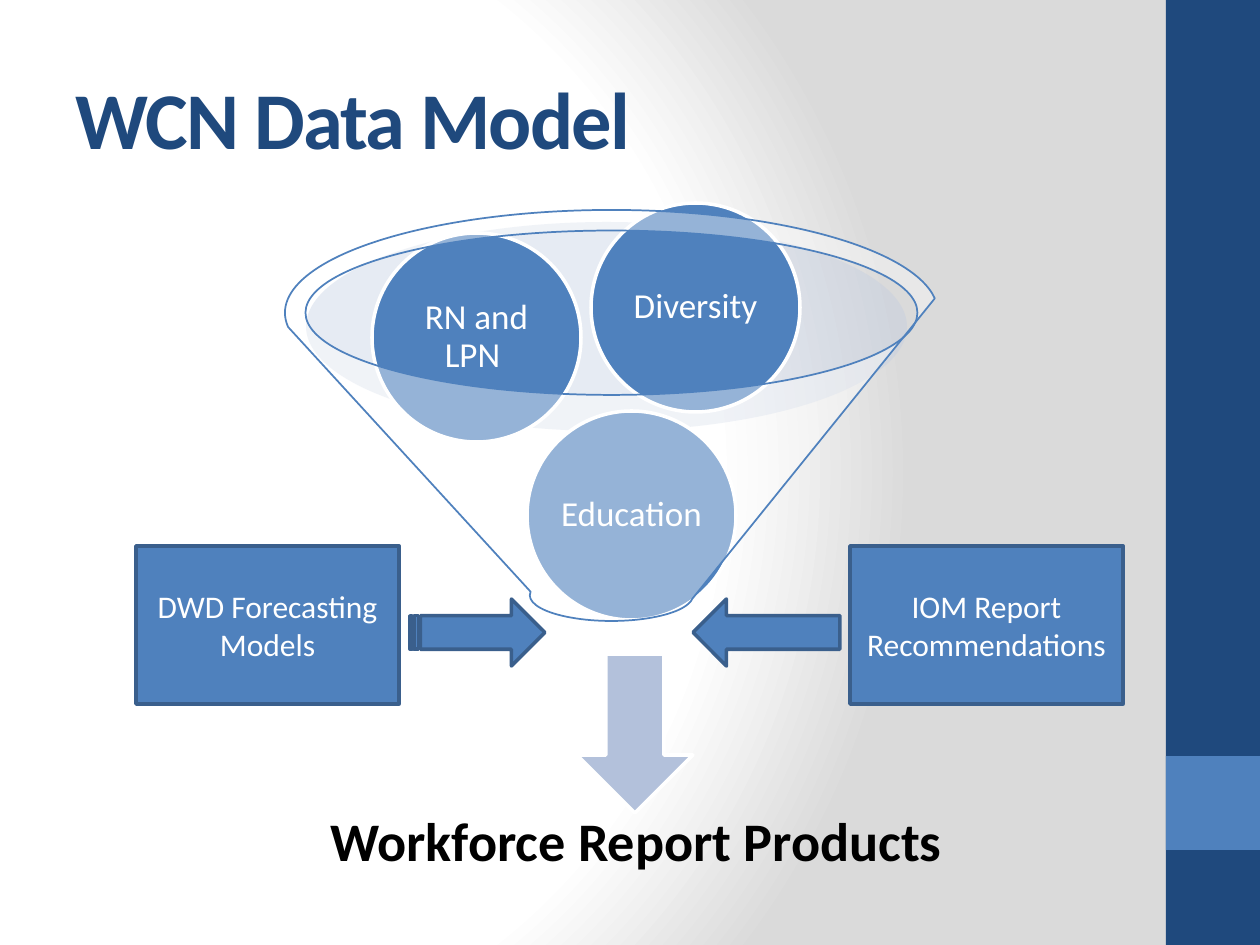
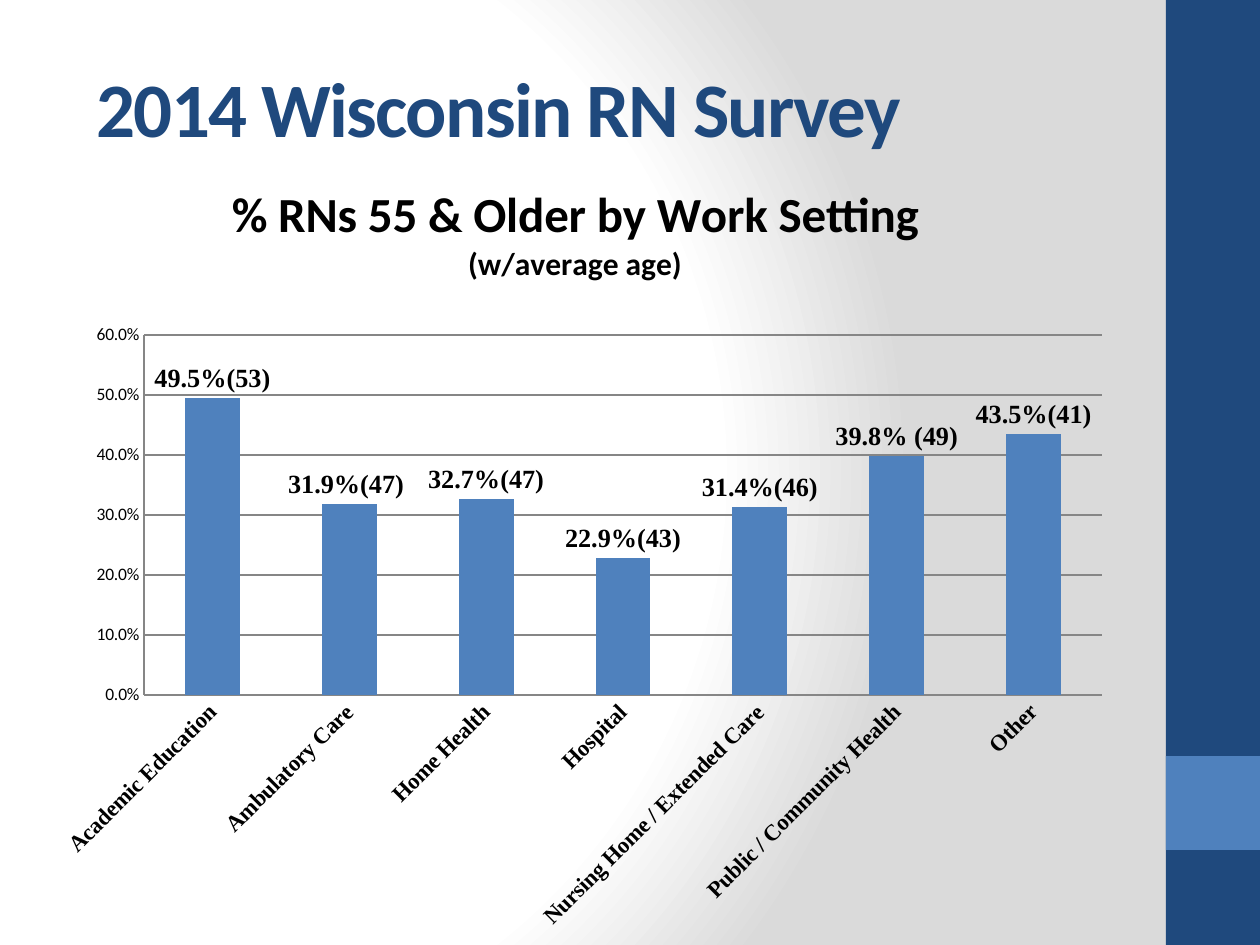
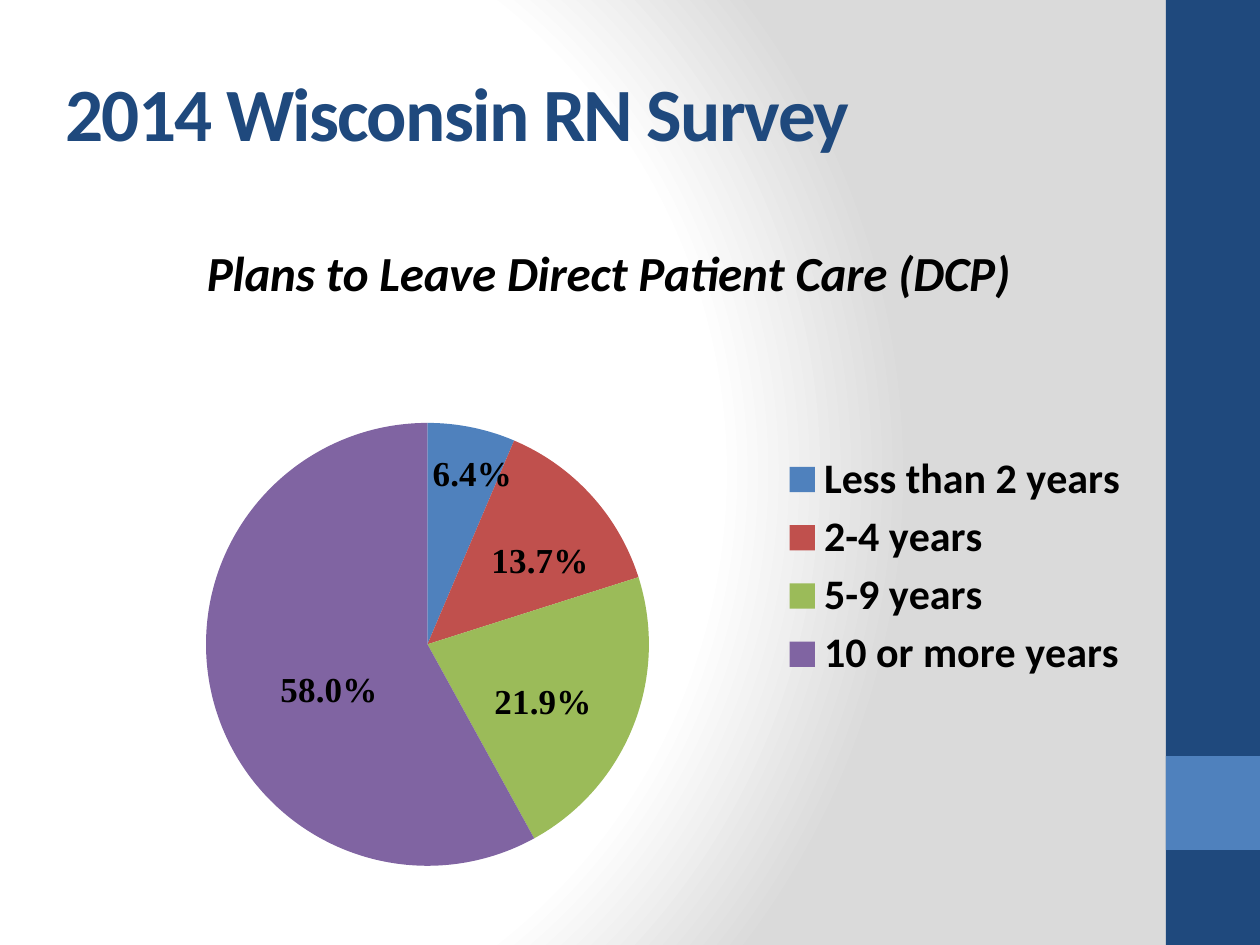
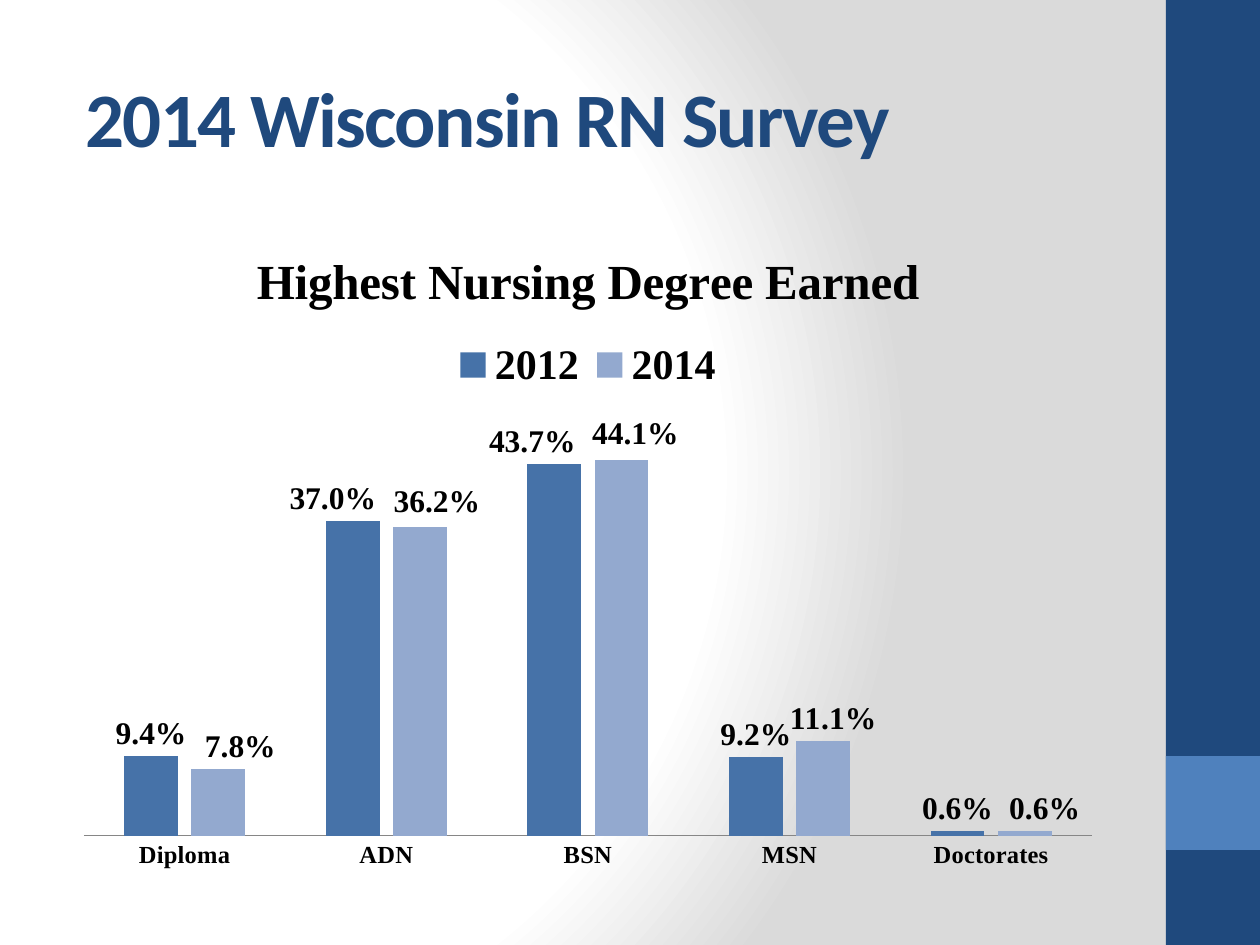
import copy

import pptx
import pptx.chart.data
import pptx.dml.color
import pptx.enum.chart
import pptx.enum.shapes
import pptx.enum.text
import pptx.oxml
import pptx.oxml.ns
import pptx.util

SCALE = 914400 / 126  # EMU in one px
SLIDE_W, SLIDE_H = 1260, 945

COLORS = {
    "navy": "1F497D",
    "blue": "4F81BD",
    "edge": "3A5F8C",
    "haze": "C2CDE1",
    "pale": "B3C1DB",
    "red": "C0504D",
    "green": "9BBB59",
    "purple": "8064A2",
    "bar_2012": "4672A8",
    "bar_2014": "93A9CF",
    "axis": "868686",
    "grey": "DADADA",
    "white": "FFFFFF",
    "black": "000000",
}
SANS, SERIF = "Calibri", "Times New Roman"

SHAPE = pptx.enum.shapes.MSO_SHAPE
CHART = pptx.enum.chart.XL_CHART_TYPE
LABEL = pptx.enum.chart.XL_LABEL_POSITION
LEGEND = pptx.enum.chart.XL_LEGEND_POSITION
TICK = pptx.enum.chart.XL_TICK_MARK
ALIGN = pptx.enum.text.PP_ALIGN
ANCHOR = pptx.enum.text.MSO_ANCHOR
qn = pptx.oxml.ns.qn


# ---- helpers
def px(n):
    return pptx.util.Emu(round(n * SCALE))


def box(*lengths):
    return [px(n) for n in lengths]


def rgb(name):
    return pptx.dml.color.RGBColor.from_string(COLORS[name])


def xml(text, prefix):
    head, tail = text.split(">", 1)
    return pptx.oxml.parse_xml(f"{head} {pptx.oxml.ns.nsdecls(prefix)}>{tail}")


def set_all(obj, values):
    for key, value in values.items():
        setattr(obj, key, value)


def set_font(font, size, name=SANS, bold=False, color="black", italic=False):
    set_all(font, {"size": pptx.util.Pt(size), "name": name,
                   "bold": bold, "italic": italic})
    font.color.rgb = rgb(color)


def set_text(p, text, **fmt):
    r = p.add_run()
    r.text = text
    set_font(r.font, **fmt)
    return r


# ---- shapes
def add_shape(slide, kind, at, fill, line=None, width=2, alpha=None):
    sp = slide.shapes.add_shape(kind, *box(*at))
    sp.shadow.inherit = False
    sp.fill.solid()
    sp.fill.fore_color.rgb = rgb(fill)
    if alpha:
        clr = sp.element.spPr.find(".//" + qn("a:srgbClr"))
        clr.append(xml(f'<a:alpha val="{alpha * 1000}"></a:alpha>', "a"))
    if line:
        sp.line.color.rgb = rgb(line)
        sp.line.width = pptx.util.Pt(width)
    else:
        sp.line.fill.background()
    return sp


def add_words(sp, text, inset=None, spacing=None, **fmt):
    tf = sp.text_frame
    set_all(tf, {"word_wrap": True, "vertical_anchor": ANCHOR.MIDDLE})
    if inset is not None:
        sides = ("left", "top", "right", "bottom")
        set_all(tf, {f"margin_{side}": px(inset) for side in sides})
    p = tf.paragraphs[0]
    set_all(p, {"alignment": ALIGN.CENTER, "line_spacing": spacing})
    set_text(p, text, **fmt)


# ---- shared look
def set_master(prs, slide):
    master = prs.slide_master
    master.background.fill.solid()
    bg = master.element.cSld.bg.bgPr
    stops = "".join(
        f'<a:gs pos="{pos * 1000}"><a:srgbClr val="{COLORS[name]}"/></a:gs>'
        for pos, name in ((0, "white"), (75, "white"), (100, "grey")))
    bg.replace(bg[0], xml(
        f'<a:gradFill rotWithShape="1"><a:gsLst>{stops}</a:gsLst>'
        '<a:path path="circle"><a:fillToRect l="20000" t="50000" '
        'r="100000" b="50000"/></a:path></a:gradFill>', "a"))
    # Side bands, moved behind the master's placeholders
    tree = master.element.cSld.spTree
    bands = ((0, SLIDE_H, "navy"), (756, 94, "blue"))
    for i, (top, height, fill) in enumerate(bands):
        sp = add_shape(slide, SHAPE.RECTANGLE, (1166, top, 94, height), fill)
        sp.element.nvSpPr.cNvPr.set("id", str(100 + i))
        tree.insert(2 + i, sp.element)


def add_slide(prs, title, at, size):
    slide = prs.slides.add_slide(prs.slide_layouts[5])
    sp = slide.shapes.title
    set_all(sp, dict(zip(("left", "top", "width", "height"), box(*at))))
    tf = sp.text_frame
    set_all(tf, {"word_wrap": True, "vertical_anchor": ANCHOR.MIDDLE,
                 "auto_size": pptx.enum.text.MSO_AUTO_SIZE.NONE})
    p = tf.paragraphs[0]
    p.alignment = ALIGN.LEFT
    r = set_text(p, title, size=size, bold=True, color="navy")
    r.font._element.set("spc", "-100")
    return slide


# ---- charts
def place(chart, tag, frame, at, inner=False):
    """Put the plot area, title or legend at a px box on the slide."""
    el = chart.element.find(".//" + qn(tag))
    for old in el.findall(qn("c:layout")):
        el.remove(old)
    left, top, width, height = frame
    parts = {"x": (at[0] - left) / width, "y": (at[1] - top) / height}
    if len(at) == 4:
        parts.update(w=at[2] / width, h=at[3] / height)
    target = '<c:layoutTarget val="inner"/>' if inner else ""
    modes = '<c:xMode val="edge"/><c:yMode val="edge"/>'
    values = "".join(f'<c:{k} val="{v:.4f}"/>' for k, v in parts.items())
    layout = xml(f"<c:layout><c:manualLayout>{target}{modes}{values}"
                 "</c:manualLayout></c:layout>", "c")
    el.insert(0 if inner else 1, layout)


def nudge_labels(series, frame, moves):
    """Shift single data labels by px, keeping the format of the series."""
    labels = series.data_labels._element
    shared = [el for el in labels
              if el.tag not in (qn("c:dLbl"), qn("c:showLeaderLines"))]
    for i, (idx, (dx, dy)) in enumerate(moves.items()):
        label = xml(
            f'<c:dLbl><c:idx val="{idx}"/><c:layout><c:manualLayout>'
            f'<c:x val="{dx / frame[2]:.4f}"/><c:y val="{dy / frame[3]:.4f}"/>'
            "</c:manualLayout></c:layout></c:dLbl>", "c")
        label.extend(copy.deepcopy(el) for el in shared)
        labels.insert(i, label)


def add_chart(slide, kind, frame, cats, series, title, plot_at, title_at):
    data = pptx.chart.data.CategoryChartData(number_format="0.0%")
    data.categories = cats
    for name, values in series:
        data.add_series(name, values)
    chart = slide.shapes.add_chart(kind, *box(*frame), data).chart
    set_font(chart.font, 10)
    chart.has_legend = False
    chart.has_title = True
    tf = chart.chart_title.text_frame
    for i, (text, fmt) in enumerate(title):
        p = tf.add_paragraph() if i else tf.paragraphs[0]
        set_text(p, text, bold=True, **fmt)
    place(chart, "c:plotArea", frame, plot_at, inner=True)
    place(chart, "c:title", frame, title_at)
    return chart


def add_legend(chart, position, frame, at, name):
    chart.has_legend = True
    set_all(chart.legend, {"position": position, "include_in_layout": False})
    set_font(chart.legend.font, 24, name, bold=True)
    place(chart, "c:legend", frame, at)


def set_labels(series, size, position, **show):
    labels = series.data_labels
    set_font(labels.font, size, SERIF, bold=True)
    set_all(labels, {"number_format": "0.0%", "number_format_is_linked": False,
                     "position": position, **show})


def set_columns(chart, fills, top, cat_size):
    plot = chart.plots[0]
    set_all(plot, {"gap_width": 150, "vary_by_categories": False})
    for series, fill in zip(plot.series, fills):
        series.format.fill.solid()
        series.format.fill.fore_color.rgb = rgb(fill)
    cat, val = chart.category_axis, chart.value_axis
    for axis in (cat, val):
        set_all(axis, {"major_tick_mark": TICK.NONE,
                       "minor_tick_mark": TICK.NONE})
        axis.format.line.color.rgb = rgb("axis")
    set_font(cat.tick_labels.font, cat_size, SERIF, bold=True)
    set_all(val, {"minimum_scale": 0, "maximum_scale": top, "major_unit": 0.1})
    set_all(val.tick_labels, {"number_format": "0.0%",
                              "number_format_is_linked": False})


# ---- slides
def add_data_model(slide):
    # Funnel with its three inputs
    add_shape(slide, SHAPE.OVAL, (306, 222, 601, 209), "haze", alpha=40)
    add_shape(slide, SHAPE.DOWN_ARROW, (577, 654, 116, 159), "pale", "white")
    result = slide.shapes.add_textbox(*box(290, 774, 692, 140))
    add_words(result, "Workforce Report Products", inset=30, spacing=0.9,
              size=31, bold=True)
    for text, left, top in (("Education", 527, 411), ("RN and LPN ", 372, 233),
                            ("Diversity", 591, 203)):
        ball = add_shape(slide, SHAPE.OVAL, (left, top, 209, 209),
                         "blue", "white")
        add_words(ball, text, inset=0, spacing=0.9, size=20, color="white")
    add_shape(slide, SHAPE.FUNNEL, (285, 210, 653, 411), "white", "blue",
              width=1, alpha=40)
    # Outside sources
    for kind, arrow_at, text, left, width in (
            (SHAPE.STRIPED_RIGHT_ARROW, (410, 599, 135, 67),
             "DWD Forecasting Models", 136, 263),
            (SHAPE.LEFT_ARROW, (693, 599, 147, 67),
             "IOM Report Recommendations", 850, 273)):
        add_shape(slide, kind, arrow_at, "blue", "edge")
        source = add_shape(slide, SHAPE.RECTANGLE, (left, 546, width, 158),
                           "blue", "edge")
        add_words(source, text, size=18, color="white")


def add_work_settings(slide):
    settings = {
        "Academic Education": (0.495, "49.5%(53)"),
        "Ambulatory Care": (0.319, "31.9%(47) "),
        "Home Health": (0.327, "32.7%(47)"),
        "Hospital": (0.229, "22.9%(43)"),
        "Nursing Home / Extended Care": (0.314, "31.4%(46)"),
        "Public / Community Health": (0.398, "39.8% (49)"),
        "Other": (0.435, "43.5%(41)"),
    }
    values, texts = zip(*settings.values())
    chart = add_chart(
        slide, CHART.COLUMN_CLUSTERED, (42, 179, 1081, 766), list(settings),
        [("", values)],
        [("% RNs 55 & Older by Work Setting", {"size": 28}),
         ("(w/average age)", {"size": 18})],
        plot_at=(144, 335, 958, 360), title_at=(228, 180))
    set_columns(chart, ["blue"], top=0.6, cat_size=13)
    chart.value_axis.major_gridlines.format.line.color.rgb = rgb("axis")
    chart.category_axis._element.txPr.bodyPr.set("rot", "-2700000")
    series = chart.plots[0].series[0]
    set_labels(series, 15, LABEL.OUTSIDE_END, show_value=True)
    for i, text in enumerate(texts):
        label = series.points[i].data_label
        set_text(label.text_frame.paragraphs[0], text, size=15, name=SERIF,
                 bold=True)
        label.position = LABEL.OUTSIDE_END


def add_leave_plans(slide):
    frame = (73, 210, 1071, 714)
    chart = add_chart(
        slide, CHART.PIE, frame,
        ["Less than 2 years", "2-4 years", "5-9 years", "10 or more years"],
        [("Series 1", (6.4, 13.7, 21.9, 58))],
        [("Plans to Leave Direct Patient Care (DCP)",
          {"size": 28, "italic": True})],
        plot_at=(206, 423, 443, 443), title_at=(198, 231))
    add_legend(chart, LEGEND.RIGHT, frame, (780, 447, 350, 240), SANS)
    series = chart.plots[0].series[0]
    for i, fill in enumerate(("blue", "red", "green", "purple")):
        wedge = series.points[i].format.fill
        wedge.solid()
        wedge.fore_color.rgb = rgb(fill)
    set_labels(series, 20, LABEL.CENTER, show_value=False,
               show_percentage=True)
    nudge_labels(series, frame,
                 {0: (23, -61), 1: (31, -8), 2: (13, 17), 3: (9, 19)})


def add_degrees(slide):
    frame = (63, 221, 1050, 662)
    chart = add_chart(
        slide, CHART.COLUMN_CLUSTERED, frame,
        ["Diploma", "ADN", "BSN", "MSN", "Doctorates"],
        [("2012", (0.094, 0.37, 0.437, 0.092, 0.006)),
         ("2014", (0.078, 0.362, 0.441, 0.111, 0.006))],
        [("Highest Nursing Degree Earned", {"size": 28, "name": SERIF})],
        plot_at=(84, 410, 1008, 426), title_at=(248, 241))
    add_legend(chart, LEGEND.TOP, frame, (442, 338, 292, 54), SERIF)
    set_columns(chart, ["bar_2012", "bar_2014"], top=0.5, cat_size=14)
    set_all(chart.value_axis, {"visible": False, "has_major_gridlines": False})
    plot = chart.plots[0]
    plot.overlap = -25
    moves = ({1: (-20, 0), 2: (-22, 0)},
             {0: (22, 0), 1: (17, -4), 2: (14, -4), 3: (10, 0), 4: (20, 0)})
    for series, shifts in zip(plot.series, moves):
        set_labels(series, 18, LABEL.OUTSIDE_END, show_value=True)
        nudge_labels(series, frame, shifts)


def main():
    prs = pptx.Presentation()
    prs.slide_width, prs.slide_height = box(SLIDE_W, SLIDE_H)
    survey = "2014 Wisconsin RN Survey"
    pages = (
        ("WCN Data Model", (63, 38, 1050, 158), 46, add_data_model),
        (survey, (84, 42, 1134, 130), 44, add_work_settings),
        (survey, (53, 32, 1155, 158), 43, add_leave_plans),
        (survey, (73, 38, 1092, 158), 44, add_degrees),
    )
    for i, (title, at, size, fill_slide) in enumerate(pages):
        slide = add_slide(prs, title, at, size)
        if i == 0:
            set_master(prs, slide)
        fill_slide(slide)
    prs.save("out.pptx")


if __name__ == "__main__":
    main()
